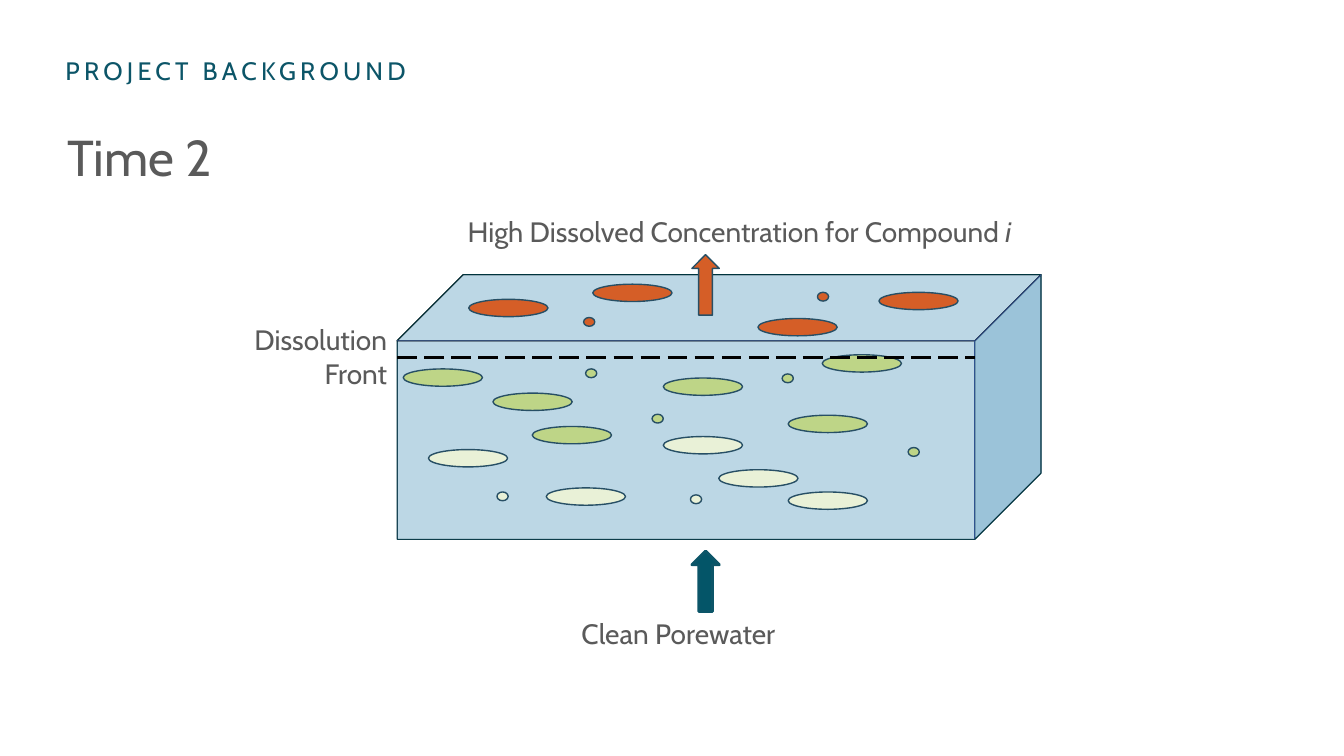
from dataclasses import dataclass

from lxml.etree import SubElement
from pptx import Presentation
from pptx.dml.color import RGBColor
from pptx.enum.dml import MSO_LINE
from pptx.enum.shapes import MSO_CONNECTOR, MSO_SHAPE
from pptx.enum.text import MSO_ANCHOR, PP_ALIGN
from pptx.oxml.ns import qn
from pptx.util import Pt


@dataclass(frozen=True)
class Theme:
    font: str = "Cabin"
    title_size: float = 36
    label_size: float = 20
    eyebrow_size: float = 18
    text: str = "5A5A5A"
    teal: str = "0C5568"
    inflow: str = "035568"
    water: str = "BCD7E5"
    side: str = "9BC3D9"
    orange: str = "D55E27"
    green: str = "BED587"
    pale: str = "E9F1D7"
    outline: str = "274F65"
    edge: str = "2F528F"
    silhouette: str = "00343D"
    black: str = "000000"


THEME = Theme()

LEFT, RIGHT, TOP, BOTTOM = 283.6, 696.4, 243.4, 385.2
DEPTH = 47.2
BACK_LEFT, BACK_RIGHT = LEFT + DEPTH, RIGHT + DEPTH
BACK_TOP, BACK_BOTTOM = TOP - DEPTH, BOTTOM - DEPTH
FRONT_Y = 255.4

LARGE, SMALL = (56.6, 12.4), (8, 6.3)
BLOBS = [
    (THEME.green, LARGE, [(288, 263.5), (352.1, 280.8), (473.8, 270),
                          (587.3, 253.4), (380.2, 304.6), (563, 296.6)]),
    (THEME.green, SMALL, [(418.3, 263.5), (558.7, 267.1), (465.8, 295.9), (648.7, 319.7)]),
    (THEME.pale, LARGE, [(306, 321.1), (390.2, 348.5), (473.8, 311.8),
                         (563, 351.4), (513.4, 335.5)]),
    (THEME.pale, SMALL, [(493.2, 353.5), (355, 351.4)]),
    (THEME.orange, LARGE, [(334.8, 213.8), (423.4, 203), (627.8, 208.8), (541.4, 227.5)]),
    (THEME.orange, SMALL, [(416.9, 226.8), (583.9, 208.8)]),
]


def rgb(color):
    return RGBColor.from_string(color)


def style_shape(sp, fill, line, width):
    sp.shadow.inherit = False
    if fill:
        sp.fill.solid()
        sp.fill.fore_color.rgb = rgb(fill)
    else:
        sp.fill.background()
    sp.line.color.rgb = rgb(line)
    sp.line.width = Pt(width)


def add_preset(s, kind, box, fill, line=THEME.outline, width=1):
    sp = s.shapes.add_shape(kind, *map(Pt, box))
    style_shape(sp, fill, line, width)
    return sp


def add_outline(s, points, fill, line, width, close=True):
    (x, y), *rest = [(Pt(px), Pt(py)) for px, py in points]
    builder = s.shapes.build_freeform(x, y)
    builder.add_line_segments(rest, close=close)
    style_shape(builder.convert_to_shape(), fill, line, width)


def add_line(s, start, end, color, width, dash=None):
    line = s.shapes.add_connector(MSO_CONNECTOR.STRAIGHT, *map(Pt, start + end))
    line.line.color.rgb = rgb(color)
    line.line.width = Pt(width)
    if dash:
        line.line.dash_style = dash
    SubElement(line._element.spPr, qn("a:effectLst"))


def add_up_arrow(s, top, fill, line, width):
    arrow = add_preset(s, MSO_SHAPE.RIGHT_ARROW, (486.4 - 4, top, 43.2, 19.6), fill, line, width)
    arrow.rotation = 270


def add_run(p, text, size, color, italic=None, spacing=None):
    r = p.add_run()
    r.text = text
    r.font.name = THEME.font
    r.font.size = Pt(size)
    r.font.color.rgb = rgb(color)
    r.font.italic = italic
    if spacing:
        r._r.get_or_add_rPr().set("spc", str(spacing * 100))


def set_insets(tf, horizontal, vertical):
    tf.margin_left = tf.margin_right = Pt(horizontal)
    tf.margin_top = tf.margin_bottom = Pt(vertical)


def add_label(s, box, lines, size=THEME.label_size, color=THEME.text,
              align=PP_ALIGN.LEFT, insets=(0, 0), spacing=None):
    tf = s.shapes.add_textbox(*map(Pt, box)).text_frame
    tf.word_wrap = True
    set_insets(tf, *insets)
    for i, runs in enumerate(lines):
        p = tf.add_paragraph() if i else tf.paragraphs[0]
        p.alignment = align
        for text, italic in runs:
            add_run(p, text, size, color, italic, spacing)


def add_title(s, text):
    title = s.shapes.title
    title.left, title.top, title.width, title.height = map(Pt, (48.2, 85, 864, 54))
    tf = title.text_frame
    tf.word_wrap = True
    tf.vertical_anchor = MSO_ANCHOR.MIDDLE
    set_insets(tf, 0, 3.6)
    p = tf.paragraphs[0]
    p.alignment = PP_ALIGN.LEFT
    add_run(p, text, THEME.title_size, THEME.text)


def add_block(s):
    front = (LEFT, TOP, RIGHT - LEFT, BOTTOM - TOP)
    add_preset(s, MSO_SHAPE.RECTANGLE, front, THEME.water, width=0.75)
    front_left, front_right = (LEFT, TOP), (RIGHT, TOP)
    back_left, back_right = (BACK_LEFT, BACK_TOP), (BACK_RIGHT, BACK_TOP)
    base_left, base_right = (LEFT, BOTTOM), (RIGHT, BOTTOM)
    base_back = (BACK_RIGHT, BACK_BOTTOM)
    add_outline(s, [front_right, back_right, base_back, base_right],
                THEME.side, THEME.outline, 0.75)
    add_outline(s, [front_left, back_left, back_right, front_right],
                THEME.water, THEME.black, 0.75)
    add_outline(s, [front_left, back_left, back_right, base_back, base_right, base_left],
                None, THEME.silhouette, 0.63)
    add_outline(s, [front_left, front_right, back_right], None, THEME.edge, 0.63, close=False)
    add_line(s, front_right, base_right, THEME.edge, 0.63)


def main():
    prs = Presentation()
    prs.slide_width, prs.slide_height = Pt(960), Pt(540)
    s = prs.slides.add_slide(prs.slide_layouts[5])

    add_label(s, (46.8, 39.6, 468, 21.6), [[("PROJECT BACKGROUND", None)]],
              THEME.eyebrow_size, THEME.teal, spacing=3)
    add_title(s, "Time 2")
    add_block(s)
    for fill, size, corners in BLOBS:
        for corner in corners:
            add_preset(s, MSO_SHAPE.OVAL, corner + size, fill)

    add_label(s, (334.1, 153.4, 416, 24.5),
              [[("High Dissolved Concentration for Compound ", None), ("i", True)]])
    add_label(s, (415.4, 440.6, 152, 24.5), [[("Clean Porewater", None)]])
    add_label(s, (169.2, 226.8, 114.4, 55.4), [[("Dissolution", None)], [("Front", None)]],
              align=PP_ALIGN.RIGHT, insets=(7.2, 3.6))
    add_up_arrow(s, 405.4, THEME.inflow, THEME.teal, 2)
    add_up_arrow(s, 193.7, THEME.orange, THEME.outline, 1)
    add_line(s, (LEFT, FRONT_Y), (RIGHT, FRONT_Y), THEME.black, 1.75, MSO_LINE.LONG_DASH)

    prs.save("out.pptx")


if __name__ == "__main__":
    main()
